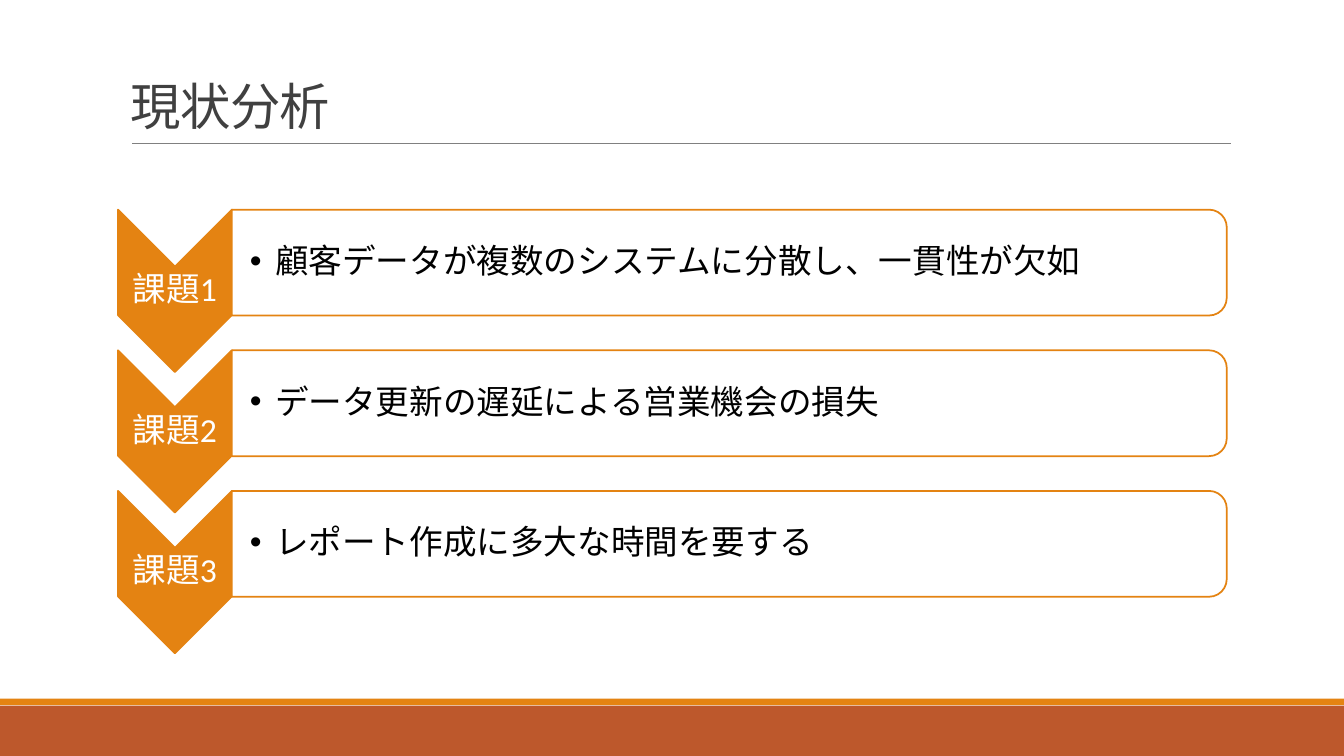
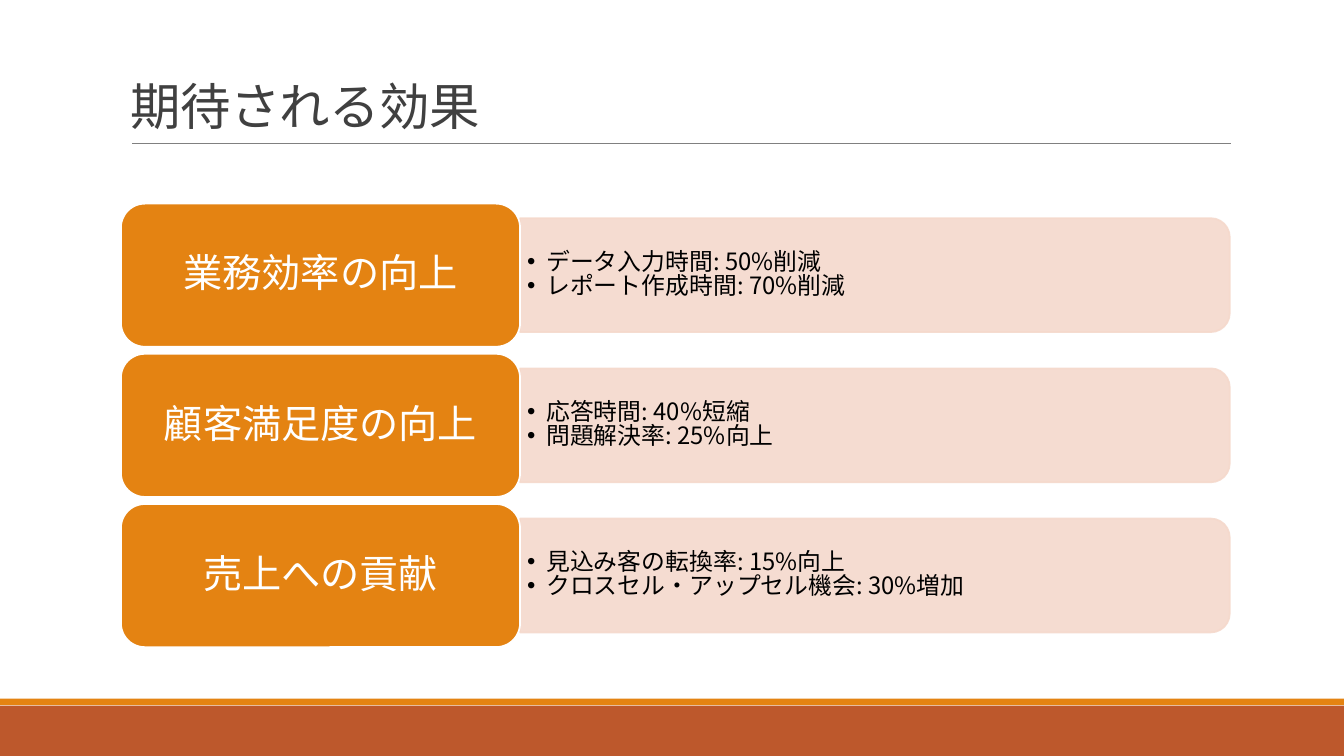
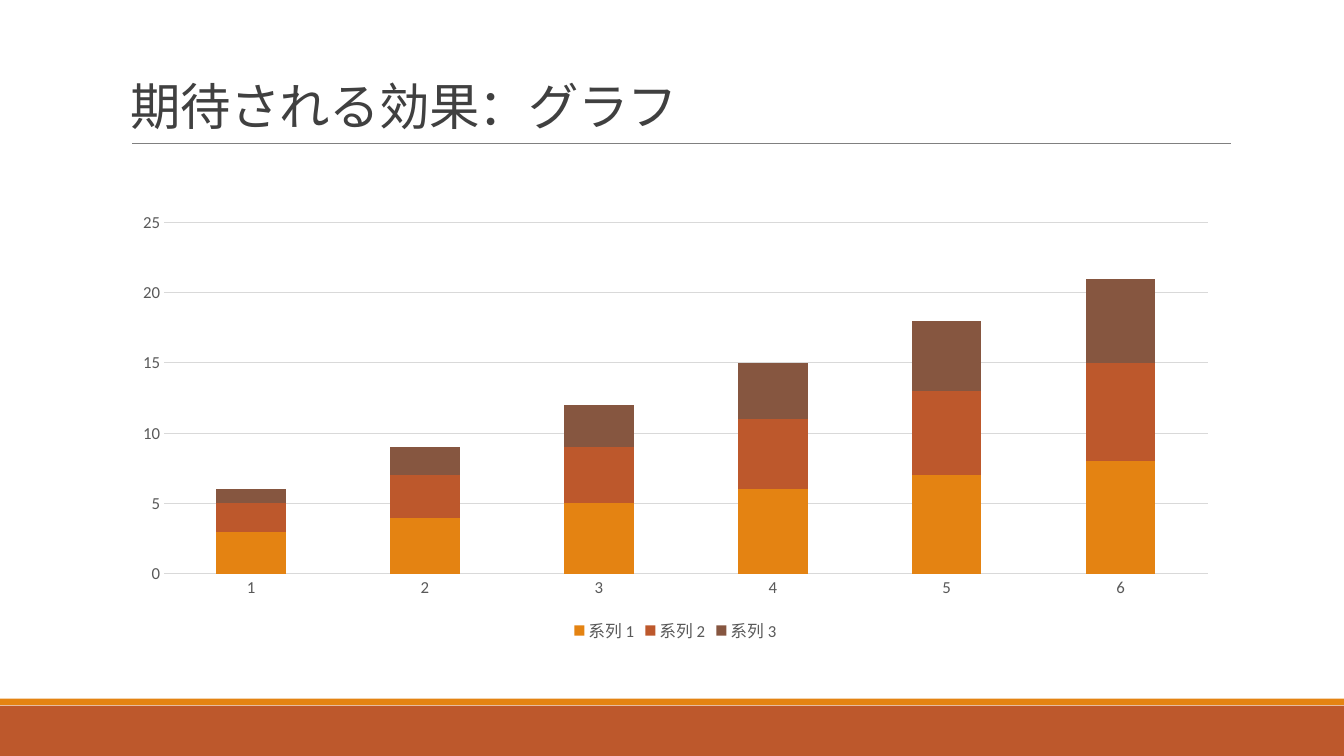
from dataclasses import dataclass

from lxml.etree import SubElement
from pptx import Presentation
from pptx.chart.data import CategoryChartData
from pptx.dml.color import RGBColor
from pptx.enum.chart import XL_CHART_TYPE, XL_LEGEND_POSITION, XL_TICK_MARK
from pptx.enum.shapes import MSO_CONNECTOR, MSO_SHAPE
from pptx.enum.text import MSO_ANCHOR, PP_ALIGN
from pptx.oxml.ns import qn
from pptx.util import Emu, Inches, Pt

ORANGE = RGBColor(0xE4, 0x83, 0x12)
RUST = RGBColor(0xBD, 0x58, 0x2C)
BROWN = RGBColor(0x86, 0x56, 0x40)
PINK = RGBColor(0xF5, 0xD9, 0xCC)
WHITE = RGBColor(0xFF, 0xFF, 0xFF)
BLACK = RGBColor(0, 0, 0)
DARK = RGBColor(0x40, 0x40, 0x40)
GRAY = RGBColor(0x59, 0x59, 0x59)
RULE = RGBColor(0x80, 0x80, 0x80)
PALE = RGBColor(0xD9, 0xD9, 0xD9)
LATIN = "Calibri"
CJK = "Noto Sans CJK JP"

COLS, ROWS = 160, 90
CELL = Inches(7.5) / ROWS
LEFT, WIDE = 14.4, 132


@dataclass(frozen=True)
class Box:
    x: float
    y: float
    w: float
    h: float

    def emu(self) -> list[Emu]:
        return [Emu(round(n * CELL)) for n in (self.x, self.y, self.w, self.h)]

    def turned(self) -> "Box":
        shift = (self.w - self.h) / 2
        return Box(self.x + shift, self.y - shift, self.h, self.w)


@dataclass(frozen=True)
class Issue:
    label: str
    text: str


@dataclass(frozen=True)
class Effect:
    label: str
    points: tuple[str, ...]


@dataclass(frozen=True)
class Series:
    name: str
    vals: tuple[int, ...]
    color: RGBColor


ISSUES = (
    Issue("課題1", "顧客データが複数のシステムに分散し、一貫性が欠如"),
    Issue("課題2", "データ更新の遅延による営業機会の損失"),
    Issue("課題3", "レポート作成に多大な時間を要する"),
)
EFFECTS = (
    Effect("業務効率の向上", ("データ入力時間: 50%削減", "レポート作成時間: 70%削減")),
    Effect("顧客満足度の向上", ("応答時間: 40%短縮", "問題解決率: 25%向上")),
    Effect("売上への貢献", ("見込み客の転換率: 15%向上", "クロスセル・アップセル機会: 30%増加")),
)
SERIES = (
    Series("系列 1", (3, 4, 5, 6, 7, 8), ORANGE),
    Series("系列 2", (2, 3, 4, 5, 6, 7), RUST),
    Series("系列 3", (1, 2, 3, 4, 5, 6), BROWN),
)


def write(frame, *lines: str, size: float, color: RGBColor, font: str = CJK,
          align=PP_ALIGN.LEFT, anchor=MSO_ANCHOR.MIDDLE, space: float = 0.9,
          pad: float = 0.02, indent: float = 0, track: int = 0) -> None:
    frame.word_wrap = True
    frame.vertical_anchor = anchor
    frame.margin_left = frame.margin_right = Inches(pad)
    frame.margin_top = frame.margin_bottom = Inches(0.04)
    for i, line in enumerate(lines):
        para = frame.add_paragraph() if i else frame.paragraphs[0]
        para.alignment = align
        para.line_spacing = space
        if indent:
            props = para._p.get_or_add_pPr()
            props.set("marL", str(Inches(indent)))
            props.set("indent", str(-Inches(indent)))
            SubElement(props, qn("a:buFont")).set("typeface", "Arial")
            SubElement(props, qn("a:buChar")).set("char", "•")
        run = para.add_run()
        run.text = line
        run.font.size = Pt(size)
        run.font.color.rgb = color
        run.font.name = font
        props = run._r.get_or_add_rPr()
        SubElement(props, qn("a:ea")).set("typeface", CJK)
        if track:
            props.set("spc", str(track))


def label(slide, box: Box, *lines: str, **style) -> None:
    write(slide.shapes.add_textbox(*box.emu()).text_frame, *lines, **style)


def draw(slide, kind, box: Box, fill: RGBColor, line: RGBColor | None = None,
         turn: bool = False, alpha: int = 100):
    shape = slide.shapes.add_shape(kind, *(box.turned() if turn else box).emu())
    shape.rotation = 90 if turn else 0
    shape.shadow.inherit = False
    shape.fill.solid()
    shape.fill.fore_color.rgb = fill
    if line is None:
        shape.line.fill.background()
    else:
        shape.line.color.rgb = line
        shape.line.width = Pt(1.25)
    if alpha < 100:
        for tone in shape._element.spPr.iter(qn("a:srgbClr")):
            SubElement(tone, qn("a:alpha")).set("val", str(alpha * 1000))
    return shape


def start(deck, title: str):
    slide = deck.slides.add_slide(deck.slide_layouts[6])
    draw(slide, MSO_SHAPE.RECTANGLE, Box(0, 84, COLS, 6), RUST)
    draw(slide, MSO_SHAPE.RECTANGLE, Box(0, 83.16, COLS, 0.8), ORANGE)
    x, y, w, h = Box(15.72, 17.04, 130.8, 0).emu()
    rule = slide.shapes.add_connector(MSO_CONNECTOR.STRAIGHT, x, y, x + w, y + h)
    rule.line.color.rgb = RULE
    rule.line.width = Pt(0.5)
    SubElement(rule._element.spPr, qn("a:effectLst"))
    label(slide, Box(LEFT, 3.72, WIDE, 12.96), title, size=36, color=DARK,
          anchor=MSO_ANCHOR.BOTTOM, space=0.85, pad=0.1, track=-50)
    return slide


def issues(deck) -> None:
    slide = start(deck, "現状分析")
    for i, item in enumerate(ISSUES):
        top = 24.96 + i * 16.74
        mark = Box(14.04, top, 13.56, 19.32)
        bar = Box(mark.x + mark.w, top, 118.44, 12.6)
        draw(slide, MSO_SHAPE.CHEVRON, mark, ORANGE, ORANGE, turn=True)
        label(slide, mark, item.label, size=24, color=WHITE, font=LATIN,
              align=PP_ALIGN.CENTER)
        draw(slide, MSO_SHAPE.ROUND_2_SAME_RECTANGLE, bar, WHITE, ORANGE, turn=True)
        label(slide, bar, item.text, size=24, color=BLACK, font=LATIN,
              pad=0.18, indent=0.25)


def effects(deck) -> None:
    slide = start(deck, "期待される効果")
    for i, item in enumerate(EFFECTS):
        tile = Box(LEFT, 24.24 + i * 17.88, 47.52, 17.04)
        bar = Box(tile.x + tile.w, tile.y + 1.74, 84.48, 13.56)
        draw(slide, MSO_SHAPE.ROUND_2_SAME_RECTANGLE, bar, PINK, PINK,
             turn=True, alpha=90)
        label(slide, bar, *item.points, size=17, color=BLACK, space=0.85,
              pad=0.07, indent=0.19)
        shape = draw(slide, MSO_SHAPE.ROUNDED_RECTANGLE, tile, ORANGE, WHITE)
        write(shape.text_frame, item.label, size=28, color=WHITE,
              align=PP_ALIGN.CENTER, pad=0.12)


def style(font, size: float, color: RGBColor) -> None:
    font.name = LATIN
    font.size = Pt(size)
    font.color.rgb = color


def graph(deck) -> None:
    slide = start(deck, "期待される効果：グラフ")
    data = CategoryChartData()
    data.categories = [str(n) for n in range(1, 7)]
    for item in SERIES:
        data.add_series(item.name, item.vals)
    box = Box(LEFT, 24.24, WIDE, 52.8)
    chart = slide.shapes.add_chart(
        XL_CHART_TYPE.COLUMN_STACKED, *box.emu(), data).chart
    style(chart.font, 10, BLACK)
    chart.has_title = False
    chart.has_legend = True
    chart.legend.position = XL_LEGEND_POSITION.BOTTOM
    chart.legend.include_in_layout = False
    style(chart.legend.font, 12, GRAY)
    plot = chart.plots[0]
    plot.gap_width = 150
    plot.overlap = 100
    plot.vary_by_categories = False
    for bars, item in zip(plot.series, SERIES):
        bars.format.fill.solid()
        bars.format.fill.fore_color.rgb = item.color
    cat, val = chart.category_axis, chart.value_axis
    for axis in (cat, val):
        axis.major_tick_mark = axis.minor_tick_mark = XL_TICK_MARK.NONE
        style(axis.tick_labels.font, 12, GRAY)
    val.minimum_scale, val.maximum_scale, val.major_unit = 0, 25, 5
    val.format.line.fill.background()
    val.has_major_gridlines = True
    for line in (cat.format.line, val.major_gridlines.format.line):
        line.color.rgb = PALE
        line.width = Pt(0.75)


def main() -> None:
    deck = Presentation()
    deck.slide_width = Emu(round(COLS * CELL))
    deck.slide_height = Emu(round(ROWS * CELL))
    for build in (issues, effects, graph):
        build(deck)
    deck.save("out.pptx")


if __name__ == "__main__":
    main()
